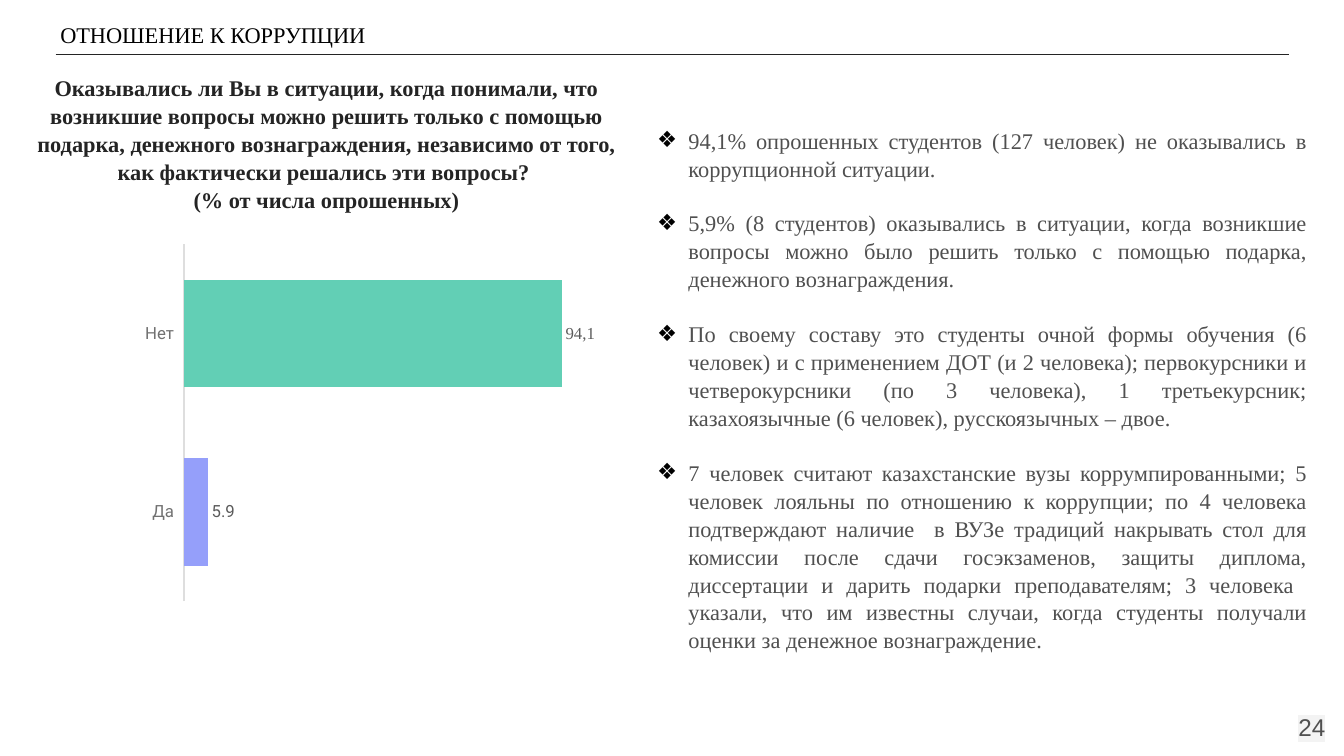
from lxml import etree
from pptx import Presentation
from pptx.chart.data import CategoryChartData
from pptx.dml.color import RGBColor
from pptx.enum.chart import XL_CHART_TYPE, XL_LABEL_POSITION, XL_TICK_LABEL_POSITION, XL_TICK_MARK
from pptx.enum.shapes import MSO_CONNECTOR
from pptx.enum.text import MSO_ANCHOR, MSO_AUTO_SIZE, PP_ALIGN
from pptx.oxml import parse_xml
from pptx.oxml.ns import nsdecls, qn
from pptx.util import Cm, Pt

COLORS = {
    "dark": "242424",
    "body": "505050",
    "black": "000000",
    "highlight": "F3F3F3",
    "axis": "DEDEDE",
    "category": "717171",
    "value": "5B5B5B",
    "no": "62CFB5",
    "yes": "959FFA",
}
SERIF = "Times New Roman"


def set_font(font, name, size, color, bold=False):
    font.name = name
    font.size = Pt(size)
    font.bold = bold
    font.color.rgb = RGBColor.from_string(COLORS[color])


def set_frame(tf, margin, anchor):
    tf.word_wrap = True
    tf.auto_size = MSO_AUTO_SIZE.NONE
    tf.vertical_anchor = anchor
    tf.margin_left = tf.margin_right = tf.margin_top = tf.margin_bottom = Cm(margin)


prs = Presentation()
prs.slide_width = Cm(33.87)
prs.slide_height = Cm(19.05)
s = prs.slides.add_slide(prs.slide_layouts[5])

rule = s.shapes.add_connector(MSO_CONNECTOR.STRAIGHT, Cm(1.4), Cm(1.38), Cm(32.49), Cm(1.38))
rule.line.color.rgb = RGBColor.from_string(COLORS["dark"])
rule.line.width = Pt(0.75)
etree.SubElement(rule._element.spPr, qn("a:effectLst"))

title = s.shapes.title
title.left, title.top, title.width, title.height = Cm(0.58), Cm(1.68), Cm(15.29), Cm(3.86)
tf = title.text_frame
set_frame(tf, 0.25, MSO_ANCHOR.MIDDLE)
p = tf.paragraphs[0]
p.text = (
    "Оказывались ли Вы в ситуации, когда понимали, что возникшие вопросы можно решить "
    "только с помощью подарка, денежного вознаграждения, независимо от того, "
    "как фактически решались эти вопросы? \v(% от числа опрошенных)"
)
p.alignment = PP_ALIGN.CENTER
p.line_spacing = 1.04
set_font(p.font, SERIF, 16, "dark", True)

number = s.shapes.add_textbox(Cm(31.7), Cm(17.6), Cm(2.03), Cm(1.45))
set_frame(number.text_frame, 0.33, MSO_ANCHOR.MIDDLE)
p = number.text_frame.paragraphs[0]
p.alignment = PP_ALIGN.RIGHT
r = p.add_run()
r.text = "24"
set_font(r.font, "Arial", 17.3, "body")
highlight = parse_xml(
    f'<a:highlight {nsdecls("a")}><a:srgbClr val="{COLORS["highlight"]}"/></a:highlight>'
)
r.font._element.find(qn("a:solidFill")).addnext(highlight)

findings = [
    "94,1% опрошенных студентов (127 человек) не оказывались в коррупционной ситуации.",
    "5,9% (8 студентов) оказывались в ситуации, когда возникшие вопросы можно было решить "
    "только с помощью подарка, денежного вознаграждения.",
    "По своему составу это студенты очной формы обучения (6 человек) и с применением ДОТ "
    "(и 2 человека); первокурсники и четверокурсники (по 3 человека), 1 третьекурсник; "
    "казахоязычные (6 человек), русскоязычных – двое.",
    "7 человек считают казахстанские вузы коррумпированными; 5 человек лояльны по отношению "
    "к коррупции; по 4 человека подтверждают наличие  в ВУЗе традиций накрывать стол для "
    "комиссии после сдачи госэкзаменов, защиты диплома, диссертации и дарить подарки "
    "преподавателям; 3 человека  указали, что им известны случаи, когда студенты получали "
    "оценки за денежное вознаграждение.",
]
body = s.shapes.add_textbox(Cm(16.23), Cm(2.84), Cm(17.04), Cm(15.8))
tf = body.text_frame
set_frame(tf, 0.33, MSO_ANCHOR.TOP)
for i, finding in enumerate(findings):
    p = tf.paragraphs[0] if i == 0 else tf.add_paragraph()
    p.text = finding
    p.alignment = PP_ALIGN.JUSTIFY
    p.line_spacing = 1.04
    p.space_after = Pt(19.2)
    set_font(p.font, SERIF, 16, "body")
    pPr = p._p.get_or_add_pPr()
    pPr.set("marL", str(Cm(0.79)))
    pPr.set("indent", str(-Cm(0.79)))
    bullet = [
        f'<a:buClr {nsdecls("a")}><a:srgbClr val="{COLORS["black"]}"/></a:buClr>',
        f'<a:buFont {nsdecls("a")} typeface="Arial"/>',
        f'<a:buChar {nsdecls("a")} char="❖"/>',
    ]
    for part in bullet:
        pPr.find(qn("a:defRPr")).addprevious(parse_xml(part))

header = s.shapes.add_textbox(Cm(1.27), Cm(0.41), Cm(30.99), Cm(0.94))
header.text_frame.word_wrap = True
header.text_frame.auto_size = MSO_AUTO_SIZE.SHAPE_TO_FIT_TEXT
p = header.text_frame.paragraphs[0]
p.text = "ОТНОШЕНИЕ К КОРРУПЦИИ"
set_font(p.font, SERIF, 16, "black")

data = CategoryChartData()
data.categories = ["Да", "Нет"]
data.add_series("Series 1", [5.9, 94.1])
chart = s.shapes.add_chart(
    XL_CHART_TYPE.BAR_CLUSTERED, Cm(1.63), Cm(5.97), Cm(13.67), Cm(9.19), data
).chart
set_font(chart.font, "Arial", 10, "dark")
chart.has_title = False
chart.has_legend = False

axis = chart.category_axis
axis.major_tick_mark = axis.minor_tick_mark = XL_TICK_MARK.NONE
axis.tick_label_position = XL_TICK_LABEL_POSITION.LOW
axis.format.line.color.rgb = RGBColor.from_string(COLORS["axis"])
axis.format.line.width = Pt(0.75)
set_font(axis.tick_labels.font, "Roboto", 12, "category")
axis = chart.value_axis
axis.visible = False
axis.has_major_gridlines = False
axis.minimum_scale = 0
axis.maximum_scale = 100

plot = chart.plots[0]
plot.gap_width = 66
plot.vary_by_categories = False
series = plot.series[0]
for fill, color in ((series.format.fill, "no"), (series.points[0].format.fill, "yes")):
    fill.solid()
    fill.fore_color.rgb = RGBColor.from_string(COLORS[color])
labels = series.data_labels
labels.show_value = True
labels.position = XL_LABEL_POSITION.OUTSIDE_END
set_font(labels.font, "Roboto", 12, "value")
label = series.points[1].data_label
label.position = XL_LABEL_POSITION.OUTSIDE_END
p = label.text_frame.paragraphs[0]
r = p.add_run()
r.text = "94,1"
set_font(r.font, SERIF, 12, "value")

plot_area = chart._chartSpace.chart.plotArea
for old in plot_area.findall(qn("c:layout")):
    plot_area.remove(old)
layout = etree.Element(qn("c:layout"))
manual = etree.SubElement(layout, qn("c:manualLayout"))
for tag, val in (
    ("layoutTarget", "inner"), ("xMode", "edge"), ("yMode", "edge"),
    ("x", "0.22"), ("y", "0.02"), ("w", "0.74"), ("h", "0.98"),
):
    etree.SubElement(manual, qn(f"c:{tag}")).set("val", val)
plot_area.insert(0, layout)

prs.save("out.pptx")
